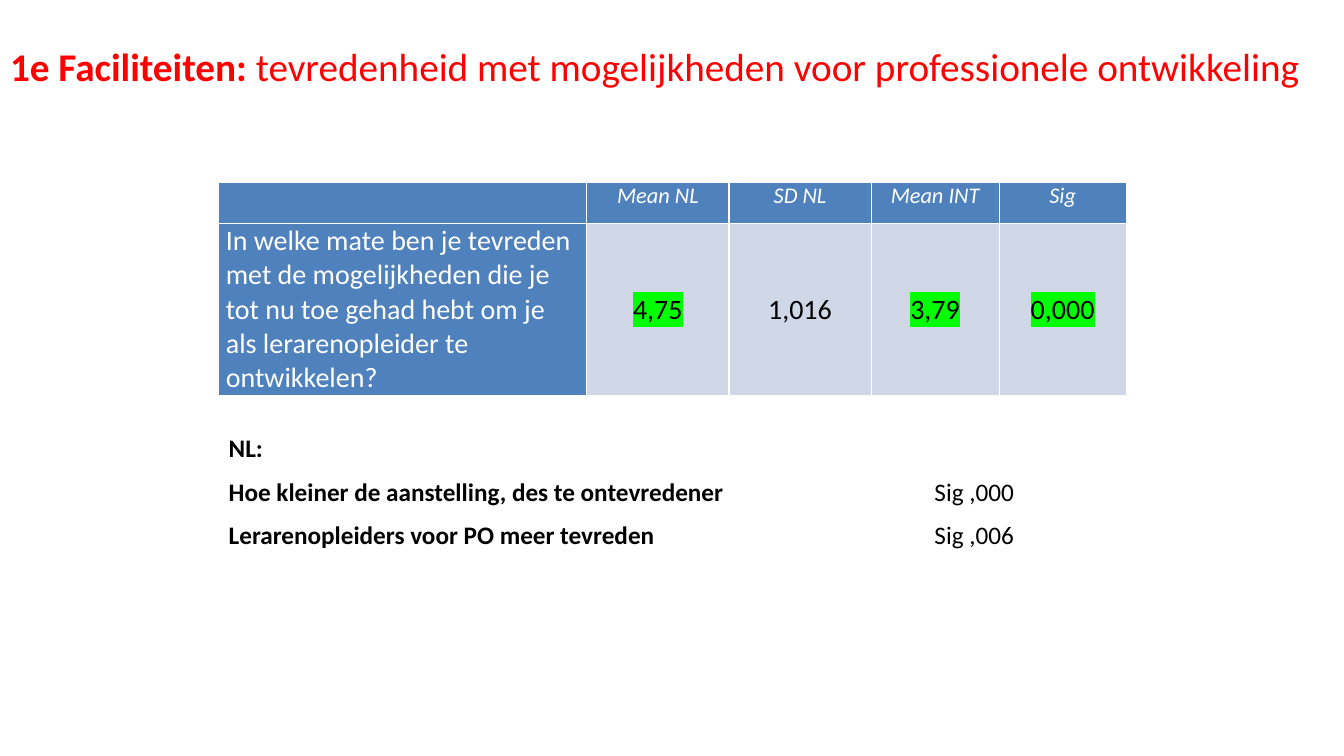
import pptx
import pptx.util
import pptx.dml.color
import pptx.enum.text
import pptx.oxml
import pptx.oxml.ns

Inches, Pt = pptx.util.Inches, pptx.util.Pt
RGBColor = pptx.dml.color.RGBColor
PP_ALIGN = pptx.enum.text.PP_ALIGN
MSO_ANCHOR = pptx.enum.text.MSO_ANCHOR

RED = RGBColor(0xFF, 0x00, 0x00)
BLACK = RGBColor(0x00, 0x00, 0x00)
WHITE = RGBColor(0xFF, 0xFF, 0xFF)
BLUE = RGBColor(0x4F, 0x81, 0xBD)
PALE_BLUE = RGBColor(0xD0, 0xD8, 0xE8)
GREEN = RGBColor(0x00, 0xFF, 0x00)

HEADINGS = ["", "Mean NL", "SD NL", "Mean INT", "Sig"]
SCORES = [
    "In welke mate ben je tevreden met de mogelijkheden die je tot nu toe "
    "gehad hebt om je als lerarenopleider te ontwikkelen?",
    "4,75", "1,016", "3,79", "0,000",
]
HIGHLIGHTED = {"4,75", "3,79", "0,000"}
COLUMN_WIDTHS = [3.65, 1.41, 1.41, 1.27, 1.26]
ROW_HEIGHTS = [0.41, 1.7]
FINDINGS = [
    ("NL:", ""),
    ("Hoe kleiner de aanstelling, des te ontevredener", "Sig ,000"),
    ("Lerarenopleiders voor PO meer tevreden", "Sig ,006"),
]


def apply(target, values):
    for name, value in values.items():
        setattr(target, name, value)


def xml_element(tag, content="", attributes=""):
    namespace = pptx.oxml.ns.nsdecls("a")
    return pptx.oxml.parse_xml(f"<a:{tag} {namespace} {attributes}>{content}</a:{tag}>")


def add_run(paragraph, text, color, **font_values):
    run = paragraph.add_run()
    run.text = text
    run.font.color.rgb = color
    apply(run.font, {"name": "Calibri", **font_values})
    return run


def highlight(run):
    text_fill = run.font.fill._xPr.find(pptx.oxml.ns.qn("a:solidFill"))
    text_fill.addnext(xml_element("highlight", f'<a:srgbClr val="{GREEN}"/>'))


def add_title(slide, left, top, width, height):
    title = slide.shapes.title
    apply(title, {"left": Inches(left), "top": Inches(top),
                  "width": Inches(width), "height": Inches(height)})
    frame = title.text_frame
    apply(frame, {"word_wrap": True, "vertical_anchor": MSO_ANCHOR.TOP,
                  "margin_top": Inches(0.17),
                  "auto_size": pptx.enum.text.MSO_AUTO_SIZE.NONE})
    heading = frame.paragraphs[0]
    apply(heading, {"alignment": PP_ALIGN.LEFT, "line_spacing": 0.9})
    add_run(heading, "1e Faciliteiten: ", RED, size=Pt(28), bold=True)
    add_run(heading, "tevredenheid met mogelijkheden voor professionele ontwikkeling",
            RED, size=Pt(28), bold=False)


def format_cell(cell, fill_color):
    apply(cell, {"margin_left": Inches(0.07), "margin_right": Inches(0.07),
                 "margin_top": 0, "margin_bottom": 0})
    properties = cell._tc.get_or_add_tcPr()
    for side in ("lnL", "lnR", "lnT", "lnB"):
        white_fill = f'<a:solidFill><a:srgbClr val="{WHITE}"/></a:solidFill>'
        properties.append(xml_element(side, white_fill, f'w="{Pt(1)}"'))
    cell.fill.solid()
    cell.fill.fore_color.rgb = fill_color


def add_score_table(slide, left, top, width, height):
    scores = slide.shapes.add_table(
        len(ROW_HEIGHTS), len(HEADINGS),
        Inches(left), Inches(top), Inches(width), Inches(height)).table
    for column, column_width in zip(scores.columns, COLUMN_WIDTHS):
        column.width = Inches(column_width)
    for row, row_height in zip(scores.rows, ROW_HEIGHTS):
        row.height = Inches(row_height)

    # Heading row
    for index, heading in enumerate(HEADINGS):
        cell = scores.cell(0, index)
        format_cell(cell, BLUE)
        if heading:
            paragraph = cell.text_frame.paragraphs[0]
            paragraph.alignment = PP_ALIGN.CENTER
            add_run(paragraph, heading, WHITE, size=Pt(16), italic=True, bold=False)

    # Question and its scores
    for index, score in enumerate(SCORES):
        is_question = index == 0
        cell = scores.cell(1, index)
        format_cell(cell, BLUE if is_question else PALE_BLUE)
        cell.vertical_anchor = MSO_ANCHOR.MIDDLE
        paragraph = cell.text_frame.paragraphs[0]
        paragraph.alignment = PP_ALIGN.LEFT if is_question else PP_ALIGN.CENTER
        run = add_run(paragraph, score, WHITE if is_question else BLACK,
                      size=Pt(20), bold=False)
        if score in HIGHLIGHTED:
            highlight(run)


def add_findings(slide, left, top, width, height):
    frame = slide.shapes.add_textbox(
        Inches(left), Inches(top), Inches(width), Inches(height)).text_frame
    frame.word_wrap = True
    for index, (finding, significance) in enumerate(FINDINGS):
        paragraph = frame.add_paragraph() if index else frame.paragraphs[0]
        apply(paragraph, {"line_spacing": 1.07, "space_after": Pt(8)})
        add_run(paragraph, finding, BLACK, size=Pt(18), bold=True)
        if significance:
            tab_stop = f'<a:tab pos="{Inches(7)}" algn="l"/>'
            paragraph._p.get_or_add_pPr().append(xml_element("tabLst", tab_stop))
            add_run(paragraph, "\t" + significance, BLACK, size=Pt(18), bold=False)


def main():
    presentation = pptx.Presentation()
    apply(presentation, {"slide_width": Inches(13.33), "slide_height": Inches(7.5)})
    slide = presentation.slides.add_slide(presentation.slide_layouts[5])
    add_title(slide, 0, 0.3, 13.33, 1.56)
    add_score_table(slide, 2.17, 1.81, sum(COLUMN_WIDTHS), sum(ROW_HEIGHTS))
    add_findings(slide, 2.17, 4.22, 9, 1.73)
    presentation.save("out.pptx")


if __name__ == "__main__":
    main()
